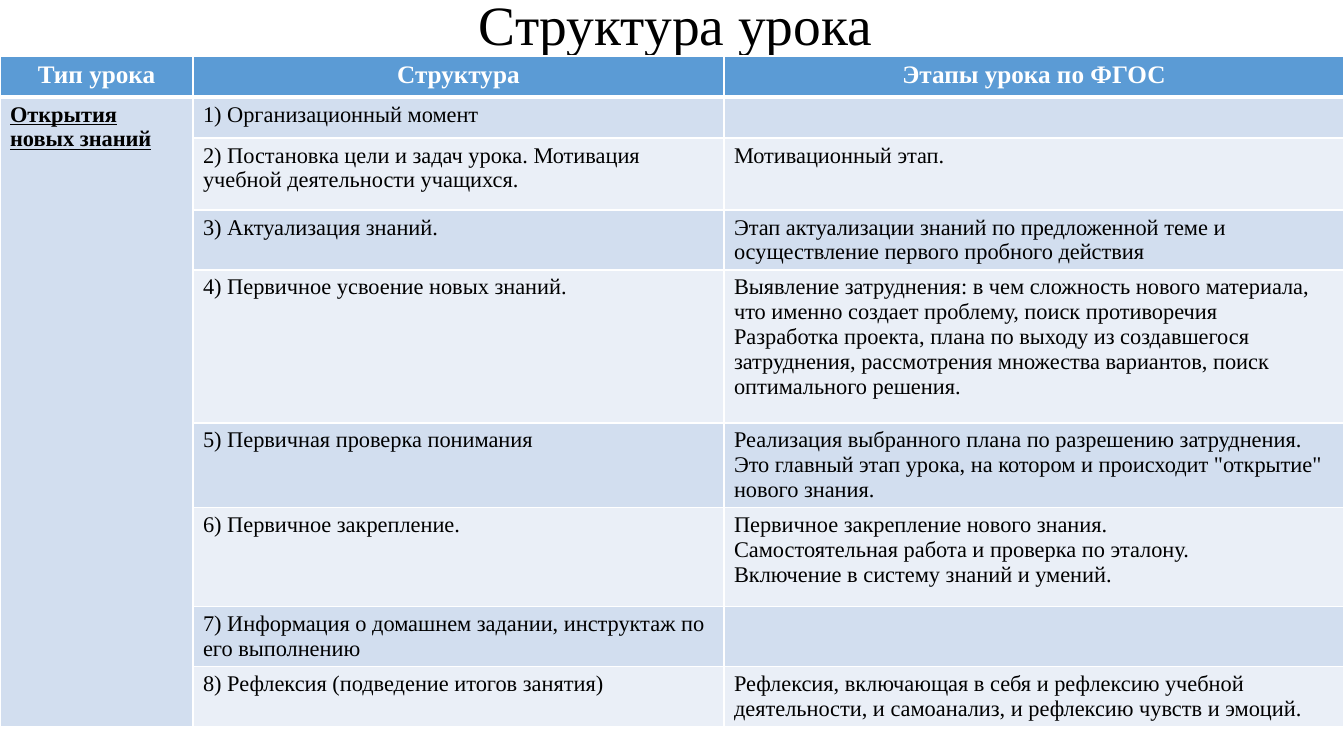
from pptx import Presentation
from pptx import util as u
from pptx.dml.color import RGBColor
from pptx.enum import text
from pptx.oxml import parse_xml
from pptx.oxml.ns import nsdecls

# Content
TITLE = "Структура урока"
HEADERS = ["Тип урока", "Структура", "Этапы урока по ФГОС"]
LESSON_TYPE = "Открытия новых знаний"
STAGES = [
    ("1) Организационный момент", ""),
    ("2) Постановка цели и задач урока. Мотивация учебной деятельности учащихся.",
     "Мотивационный этап."),
    ("3) Актуализация знаний.",
     "Этап актуализации знаний по предложенной теме и осуществление первого пробного действия"),
    ("4) Первичное усвоение новых знаний.",
     "Выявление затруднения: в чем сложность нового материала, что именно создает проблему, "
     "поиск противоречия\n"
     "Разработка проекта, плана по выходу из создавшегося затруднения, рассмотрения множества "
     "вариантов, поиск оптимального решения."),
    ("5) Первичная проверка понимания",
     "Реализация выбранного плана по разрешению затруднения. Это главный этап урока, на котором "
     "и происходит \"открытие\" нового знания."),
    ("6) Первичное закрепление.",
     "Первичное закрепление нового знания.\n"
     "Самостоятельная работа и проверка по эталону.\n"
     "Включение в систему знаний и умений."),
    ("7) Информация о домашнем задании, инструктаж по его выполнению", ""),
    ("8) Рефлексия (подведение итогов занятия)",
     "Рефлексия, включающая в себя и рефлексию учебной деятельности, и самоанализ, "
     "и рефлексию чувств и эмоций."),
]

# Layout in px and style
SLIDE_W, SLIDE_H = 1344, 756
TITLE_BOX = (96, 0, 1159, 56)
TABLE_TOP = 56
COL_W = [193, 531, 620]
ROW_H = [41, 41, 72, 60, 153, 85, 99, 60, 59]
FONT = "Times New Roman"
BLACK, WHITE, HEAD = "000000", "FFFFFF", "5B9BD5"
BANDS = ["D2DEEF", "EAEFF7"]


def px(n):
    return u.Emu(round(n * 914400 / 100.8))


def color(value):
    return RGBColor.from_string(value)


def format_text(tf, size, value, bold=False, underline=False, align=None):
    for p in tf.paragraphs:
        p.alignment = align
        for r in p.runs:
            f = r.font
            f.name, f.size, f.bold, f.underline = FONT, u.Pt(size), bold, underline
            f.color.rgb = color(value)


def set_borders(cell, top, bottom):
    tc_pr = cell._tc.get_or_add_tcPr()
    for side, width in (("L", 1), ("R", 1), ("T", top), ("B", bottom)):
        tc_pr.append(parse_xml(
            f'<a:ln{side} {nsdecls("a")} w="{u.Pt(width)}"><a:solidFill>'
            f'<a:srgbClr val="{WHITE}"/></a:solidFill></a:ln{side}>'))


prs = Presentation()
prs.slide_width, prs.slide_height = px(SLIDE_W), px(SLIDE_H)
s = prs.slides.add_slide(prs.slide_layouts[5])

# Title
title = s.shapes.title
title.left, title.top, title.width, title.height = map(px, TITLE_BOX)
tf = title.text_frame
tf.text = TITLE
tf.word_wrap = True
tf.auto_size = text.MSO_AUTO_SIZE.NONE
tf.vertical_anchor = text.MSO_ANCHOR.MIDDLE
tf.paragraphs[0].line_spacing = 0.9
format_text(tf, 39.6, BLACK, align=text.PP_ALIGN.CENTER)

# Table grid
rows = [HEADERS] + [("", *stage) for stage in STAGES]
rows[1] = (LESSON_TYPE, *STAGES[0])
table = s.shapes.add_table(len(rows), len(COL_W), px(0), px(TABLE_TOP),
                           px(sum(COL_W)), px(sum(ROW_H))).table
for col, width in zip(table.columns, COL_W):
    col.width = px(width)
for row, height in zip(table.rows, ROW_H):
    row.height = px(height)

# Table cells
for i, row in enumerate(rows):
    for j, value in enumerate(row):
        cell = table.cell(i, j)
        set_borders(cell, top=3 if i == 1 else 1, bottom=3 if i == 0 else 1)
        cell.fill.solid()
        band = 0 if j == 0 else (i - 1) % 2
        cell.fill.fore_color.rgb = color(HEAD if i == 0 else BANDS[band])
        cell.text_frame.text = value
        if i == 0:
            format_text(cell.text_frame, 18, WHITE, bold=True, align=text.PP_ALIGN.CENTER)
        else:
            format_text(cell.text_frame, 16, BLACK, bold=j == 0, underline=j == 0)
table.cell(1, 0).merge(table.cell(len(STAGES), 0))

prs.save("out.pptx")
